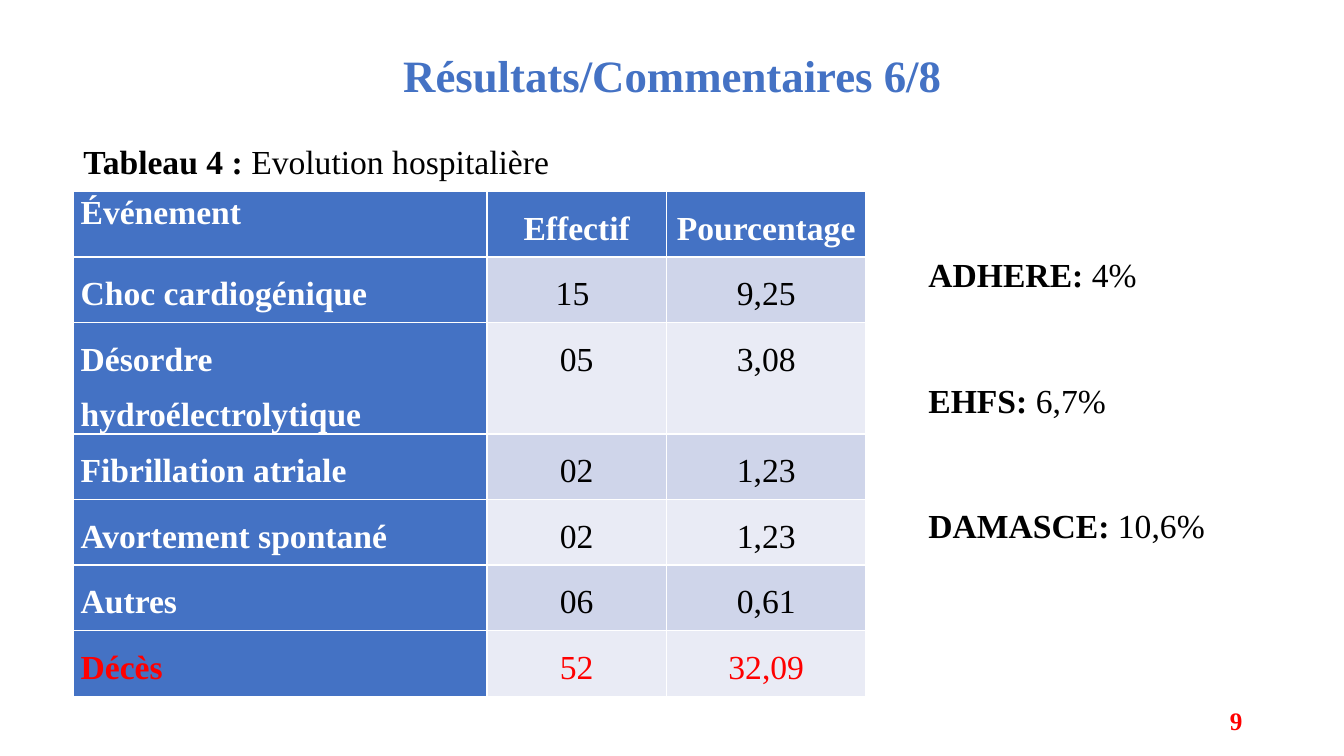
from dataclasses import dataclass

from pptx import Presentation
from pptx.dml.color import RGBColor
from pptx.enum.text import MSO_ANCHOR, PP_ALIGN
from pptx.util import Inches, Pt

LEFT, CENTER, RIGHT = PP_ALIGN.LEFT, PP_ALIGN.CENTER, PP_ALIGN.RIGHT
MIDDLE = MSO_ANCHOR.MIDDLE


@dataclass(frozen=True)
class Theme:
    font: str = "Times New Roman"
    title_size: int = 32
    text_size: int = 24
    number_size: int = 18
    blue: str = "4472C4"
    white: str = "FFFFFF"
    black: str = "000000"
    red: str = "FF0000"
    bands: tuple = ("CFD5EA", "E9EBF5")


theme = Theme()


def add_run(p, text, color=theme.black, bold=False, size=theme.text_size):
    r = p.add_run()
    r.text = text
    r.font.name = theme.font
    r.font.size = Pt(size)
    r.font.bold = bold
    r.font.color.rgb = RGBColor.from_string(color)


def add_text_box(left, top, width, height):
    tf = s.shapes.add_textbox(Inches(left), Inches(top), Inches(width), Inches(height)).text_frame
    tf.word_wrap = True
    return tf


prs = Presentation()
prs.slide_width, prs.slide_height = Inches(13.33), Inches(7.5)
s = prs.slides.add_slide(prs.slide_layouts.get_by_name("Title Only"))

# Title
title = s.shapes.title
title.left, title.top = Inches(0.92), Inches(0.4)
title.width, title.height = Inches(11.5), Inches(0.75)
title.text_frame.vertical_anchor = MIDDLE
p = title.text_frame.paragraphs[0]
p.alignment = CENTER
p.line_spacing = 0.9
add_run(p, "Résultats/Commentaires 6/8", theme.blue, True, theme.title_size)

# Table of hospital events
rows = [
    ("Événement", "Effectif", "Pourcentage"),
    ("Choc cardiogénique", "15 ", "9,25"),
    ("Désordre hydroélectrolytique", "05", "3,08"),
    ("Fibrillation atriale", "02", "1,23"),
    ("Avortement spontané", "02", "1,23"),
    ("Autres", "06", "0,61"),
    ("Décès", "52", "32,09"),
]
column_widths = (4.1, 1.78, 1.98)
row_height = 0.65
events = s.shapes.add_table(
    len(rows), len(column_widths), Inches(0.73), Inches(1.9),
    Inches(sum(column_widths)), Inches(row_height * len(rows))).table
events.first_col = True
for column, width in zip(events.columns, column_widths):
    column.width = Inches(width)

for i, row in enumerate(rows):
    events.rows[i].height = Inches(row_height)
    for j, text in enumerate(row):
        heading = i == 0 or j == 0
        cell = events.cell(i, j)
        cell.margin_left = cell.margin_right = Inches(0.07)
        cell.margin_top = cell.margin_bottom = 0
        cell.fill.solid()
        fill = theme.blue if heading else theme.bands[(i - 1) % 2]
        cell.fill.fore_color.rgb = RGBColor.from_string(fill)

        p = cell.text_frame.paragraphs[0]
        p.alignment = LEFT if j == 0 else CENTER
        p.line_spacing = 1.07 if i == j == 0 else 1.5
        if i == 0 and j > 0:
            p.space_after = Pt(8)
        color = theme.white if heading else theme.black
        if row[0] == "Décès":
            color = theme.red
        add_run(p, text, color, heading)

# Caption above the table
p = add_text_box(0.73, 1.15, 7.27, 0.64).paragraphs[0]
p.line_spacing = 1.5
p.space_after = Pt(10)
add_run(p, "Tableau 4 : ", bold=True)
add_run(p, "Evolution hospitalière")

# Rates from other studies
studies = [("ADHERE: ", "4%"), ("EHFS: ", "6,7%"), ("DAMASCE: ", "10,6%")]
tf = add_text_box(9.11, 2.27, 3.49, 3.07)
for i, (study, rate) in enumerate(studies):
    p = tf.add_paragraph() if i else tf.paragraphs[0]
    p.line_spacing = 1.5
    if i:
        p.space_before = Pt(46.5)
    add_run(p, study, bold=True)
    add_run(p, rate)

# Page number
tf = add_text_box(11.83, 6.95, 0.59, 0.4)
tf.vertical_anchor = MIDDLE
p = tf.paragraphs[0]
p.alignment = RIGHT
add_run(p, "9", theme.red, True, theme.number_size)

prs.save("out.pptx")
